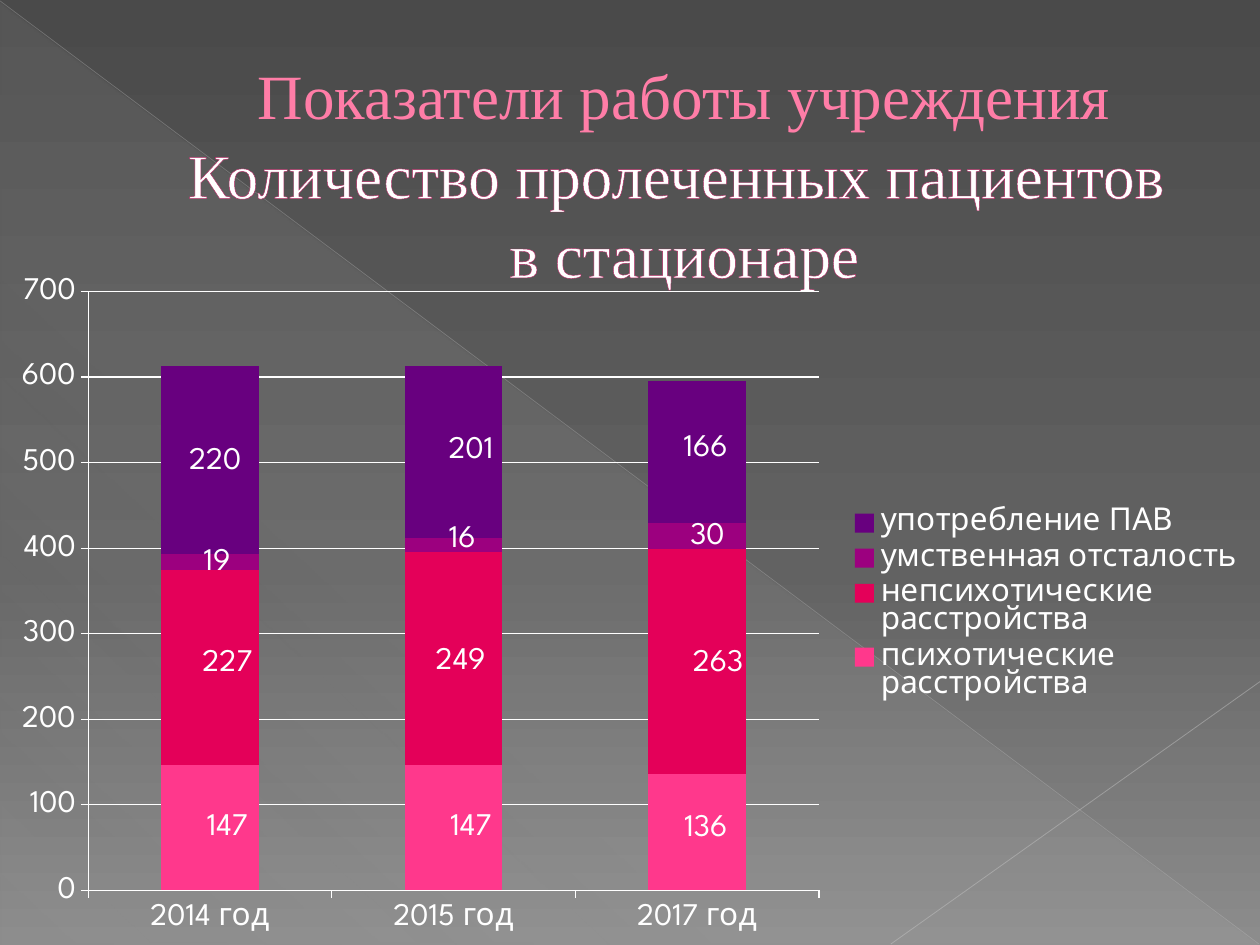
from dataclasses import dataclass

from pptx import Presentation
from pptx import oxml
from pptx import util as u
from pptx.chart import data as chart_data
from pptx.dml import color
from pptx.enum import chart as charts, shapes, text
from pptx.oxml import ns

Pt = u.Pt
RGB = color.RGBColor.from_string


@dataclass(frozen=True)
class Theme:
    title_font: str = "Times New Roman"
    chart_font: str = "League Spartan"
    title_size: int = 36
    chart_size: int = 18
    accent: str = "FF7DA7"
    outline: str = "B12761"
    light: str = "FFFFFF"
    backdrop: tuple = ((0, "4A4A4A", 100), (60, "626262", 100), (100, "8C8C8C", 100))
    sheen: tuple = ((0, "D2D2D2", 10), (70, "D2D2D2", 8), (100, "D2D2D2", 1))


theme = Theme()


def gradient(stops, angle):
    marks = "".join(
        f'<a:gs pos="{place * 1000}"><a:srgbClr val="{shade}">'
        f'<a:alpha val="{alpha * 1000}"/></a:srgbClr></a:gs>'
        for place, shade, alpha in stops
    )
    return oxml.parse_xml(
        f'<a:gradFill {ns.nsdecls("a")} rotWithShape="1"><a:gsLst>{marks}</a:gsLst>'
        f'<a:lin ang="{angle * 60000}" scaled="0"/></a:gradFill>'
    )


def add_text(para, words, *, font, size, shade, outline):
    for number, line in enumerate(words.split("\n")):
        if number:
            para.add_line_break()
        if not line:
            continue
        span = para.add_run()
        span.text = line
        span.font.name = font
        span.font.size = Pt(size)
        span.font.color.rgb = RGB(shade)
        span.font._element.insert(0, oxml.parse_xml(
            f'<a:ln {ns.nsdecls("a")} w="{Pt(0.5)}"><a:solidFill>'
            f'<a:srgbClr val="{outline}"/></a:solidFill></a:ln>'
        ))


deck = Presentation()
deck.slide_width, deck.slide_height = Pt(720), Pt(540)
page = deck.slides.add_slide(deck.slide_layouts[5])

page.background.fill.solid()
background = page._element.find(".//" + ns.qn("p:bgPr"))
background.replace(background[0], gradient(theme.backdrop, 90))

triangle = page.shapes.add_shape(
    shapes.MSO_SHAPE.RIGHT_TRIANGLE, Pt(0.5), Pt(1.3), Pt(719), Pt(538.7)
)
triangle.shadow.inherit = False
triangle.line.fill.background()
triangle.fill.solid()
properties = triangle._element.spPr
properties.replace(properties.find(ns.qn("a:solidFill")), gradient(theme.sheen, 133))

for start, end, shade, width, alpha in (
    ((0, 0.5), (719.5, 539.5), "BFBFBF", 0.39, 35),
    ((720, 389.5), (509, 539.5), "C6C6C6", 0.47, 45),
):
    line = page.shapes.add_connector(
        shapes.MSO_CONNECTOR.STRAIGHT, *map(Pt, start), *map(Pt, end)
    )
    line.line.width = Pt(width)
    line.line.color.rgb = RGB(shade)
    properties = line._element.spPr
    tint = properties.find(".//" + ns.qn("a:srgbClr"))
    tint.append(oxml.parse_xml(f'<a:alpha {ns.nsdecls("a")} val="{alpha * 1000}"/>'))
    properties.append(oxml.parse_xml(f'<a:effectLst {ns.nsdecls("a")}/>'))

title = page.shapes.title
title.left, title.top, title.width, title.height = Pt(48), Pt(43), Pt(648), Pt(110)
page.shapes._spTree.append(title._element)
title.text_frame.word_wrap = True
title.text_frame.auto_size = text.MSO_AUTO_SIZE.NONE
title.text_frame.vertical_anchor = text.MSO_ANCHOR.MIDDLE
para = title.text_frame.paragraphs[0]
para.alignment = text.PP_ALIGN.CENTER
para.line_spacing = 1.05
para._p.get_or_add_pPr().set("marL", str(Pt(38)))
for words, shade in (
    ("Показатели работы учреждения\n", theme.accent),
    ("Количество пролеченных пациентов \nв стационаре", theme.light),
):
    add_text(para, words, font=theme.title_font, size=theme.title_size,
             shade=shade, outline=theme.outline)

chart_width, chart_height = 720, 389
patients = (
    ("психотические расстройства", (147, 147, 136), "FF388C",
     ((10, 0), (10, 0), (5, -2))),
    ("непсихотические расстройства", (227, 249, 263), "E40059",
     ((10, -2), (4, 2), (12, 1))),
    ("умственная отсталость", (19, 16, 30), "9C007F",
     ((4, 0), (5, -3), (6, 0))),
    ("употребление ПАВ", (220, 201, 166), "68007F",
     ((3, 1), (10, -1), (5, -2))),
)
figures = chart_data.CategoryChartData()
figures.categories = ["2014 год", "2015 год", "2017 год"]
for name, values, shade, shifts in patients:
    figures.add_series(name, values)
chart = page.shapes.add_chart(
    charts.XL_CHART_TYPE.COLUMN_STACKED, 0, Pt(151), Pt(chart_width), Pt(chart_height), figures
).chart
chart.has_title = False
chart.font.name = theme.chart_font
chart.font.size = Pt(theme.chart_size)
chart.font.color.rgb = RGB(theme.light)

plot = chart.plots[0]
plot.gap_width, plot.overlap = 150, 100
plot.vary_by_categories = False
for series, (name, values, shade, shifts) in zip(plot.series, patients):
    series.format.fill.solid()
    series.format.fill.fore_color.rgb = RGB(shade)
    series.data_labels.show_value = True
    for index, (across, down) in enumerate(shifts):
        series.points[index].data_label.position = charts.XL_LABEL_POSITION.CENTER
    for label, (across, down) in zip(series._element.iter(ns.qn("c:dLbl")), shifts):
        label.insert(1, oxml.parse_xml(
            f'<c:layout {ns.nsdecls("c")}><c:manualLayout>'
            f'<c:x val="{across / chart_width:.4f}"/><c:y val="{down / chart_height:.4f}"/>'
            '</c:manualLayout></c:layout>'
        ))

scale = chart.value_axis
scale.minimum_scale, scale.maximum_scale, scale.major_unit = 0, 700, 100
scale.has_major_gridlines = True
for axis in (scale, chart.category_axis):
    axis.major_tick_mark = charts.XL_TICK_MARK.OUTSIDE
    axis.minor_tick_mark = charts.XL_TICK_MARK.NONE
for stroke in (scale.format.line, chart.category_axis.format.line,
               scale.major_gridlines.format.line):
    stroke.color.rgb = RGB(theme.light)
    stroke.width = Pt(0.75)

chart.has_legend = True
chart.legend.position = charts.XL_LEGEND_POSITION.RIGHT
chart.legend.include_in_layout = False
plot_area = chart._chartSpace.find(".//" + ns.qn("c:plotArea"))
legend = chart.legend._element
for part, place, target, frame in (
    (plot_area, 0, '<c:layoutTarget val="inner"/>', (0.07, 0.04, 0.58, 0.88)),
    (legend, 1, "", (0.67, 0.35, 0.32, 0.3)),
):
    for layout in part.findall(ns.qn("c:layout")):
        part.remove(layout)
    sizes = "".join(f'<c:{key} val="{value}"/>' for key, value in zip("xywh", frame))
    part.insert(place, oxml.parse_xml(
        f'<c:layout {ns.nsdecls("c")}><c:manualLayout>{target}'
        f'<c:xMode val="edge"/><c:yMode val="edge"/>{sizes}</c:manualLayout></c:layout>'
    ))

deck.save("out.pptx")
